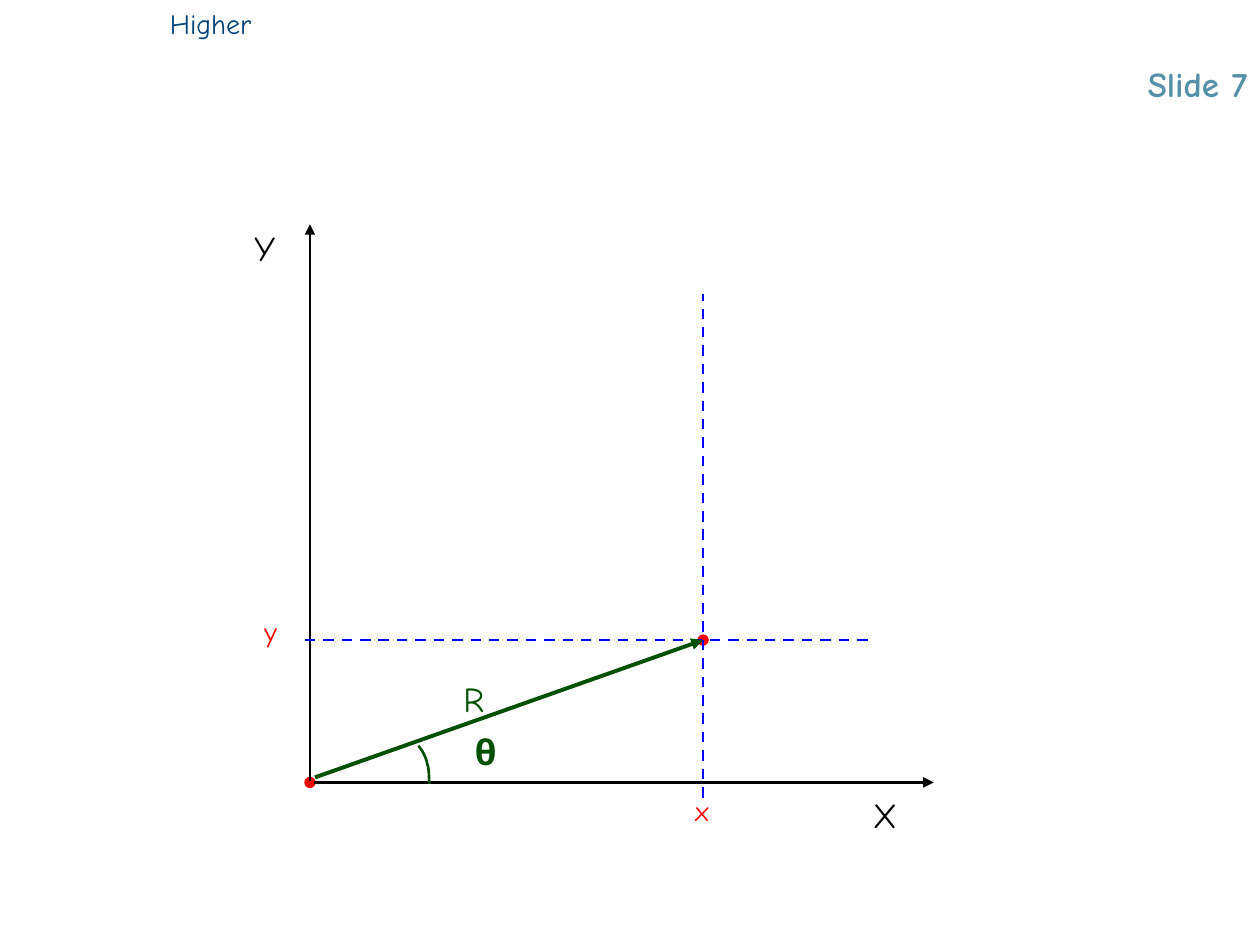
from dataclasses import dataclass

from lxml.etree import SubElement
from pptx import Presentation
from pptx.dml.color import RGBColor
from pptx.enum.dml import MSO_LINE
from pptx.enum.shapes import MSO_CONNECTOR, MSO_SHAPE
from pptx.enum.text import MSO_AUTO_SIZE, PP_ALIGN
from pptx.oxml.ns import qn
from pptx.util import Inches, Pt

FONT = "Comic Neue"
COLORS = {
    "navy": "054780",
    "teal": "5490A8",
    "head": "034176",
    "red": "FF0000",
    "black": "000000",
    "blue": "0000FF",
    "green": "005000",
}


@dataclass
class Label:
    text: str
    left: float
    top: float
    size: int
    color: str
    bold: bool = False
    width: float = 0.75


@dataclass
class Line:
    start: tuple[float, float]
    end: tuple[float, float]
    color: str
    width: float = 1.5
    arrow: bool = False


DOTS = [(2.46, 6.21), (5.58, 5.08)]
LINES = [
    Line((2.49, 6.21), (7.41, 6.21), "black", arrow=True),
    Line((2.46, 6.2), (2.46, 1.78), "black", arrow=True),
    Line((5.58, 6.33), (5.58, 2.33), "blue"),
    Line((2.42, 5.08), (6.92, 5.08), "blue"),
    Line((2.5, 6.17), (5.58, 5.08), "green", 2.25, True),
]
LABELS = [
    Label("Higher", 1.25, 0, 16, "head", width=3.58),
    Label("X", 6.83, 6.25, 20, "black"),
    Label("Y", 1.92, 1.75, 20, "black"),
    Label("x", 5.42, 6.25, 16, "red"),
    Label("y", 2, 4.83, 16, "red"),
    Label("R", 3.58, 5.33, 20, "green"),
    Label("θ", 3.67, 5.75, 20, "green", True),
]
CURVES = [
    ((3.32, 5.92), (3.34, 5.94), (3.38, 6), (3.39, 6.06)),
    ((3.39, 6.06), (3.41, 6.11), (3.4, 6.18), (3.41, 6.22)),
]


def paint(name: str) -> RGBColor:
    return RGBColor.from_string(COLORS[name])


def style(font, size: int, color: str, bold: bool) -> None:
    font.name = FONT
    font.size = Pt(size)
    font.bold = bold
    font.color.rgb = paint(color)


def add_box(slide, left: float, top: float, width: float, height: float):
    box = slide.shapes.add_textbox(
        Inches(left), Inches(top), Inches(width), Inches(height)
    )
    frame = box.text_frame
    frame.word_wrap = True
    frame.auto_size = MSO_AUTO_SIZE.SHAPE_TO_FIT_TEXT
    return frame.paragraphs[0]


def add_title(slide) -> None:
    para = add_box(slide, 1.67, 0.17, 8.33, 0.77)
    para.alignment = PP_ALIGN.RIGHT
    for text, size, color in (("\t", 40, "navy"), ("Slide 7", 20, "teal")):
        run = para.add_run()
        run.text = text
        style(run.font, size, color, True)


def add_label(slide, label: Label) -> None:
    height = 0.43 if label.size == 20 else 0.37
    para = add_box(slide, label.left, label.top, label.width, height)
    para.text = label.text
    style(para.font, label.size, label.color, label.bold)


def add_dot(slide, x: float, y: float, size: float = 0.08) -> None:
    dot = slide.shapes.add_shape(
        MSO_SHAPE.OVAL,
        Inches(x - size / 2), Inches(y - size / 2), Inches(size), Inches(size),
    )
    dot.shadow.inherit = False
    dot.fill.solid()
    dot.fill.fore_color.rgb = paint("red")
    dot.line.color.rgb = paint("red")
    dot.line.width = Pt(0.75)


def add_line(slide, line: Line) -> None:
    ends = [Inches(v) for v in (*line.start, *line.end)]
    shape = slide.shapes.add_connector(MSO_CONNECTOR.STRAIGHT, *ends)
    shape.line.color.rgb = paint(line.color)
    shape.line.width = Pt(line.width)
    if line.arrow:
        SubElement(shape.line._get_or_add_ln(), qn("a:tailEnd"), type="triangle")
    else:
        shape.line.dash_style = MSO_LINE.DASH
    SubElement(shape._element.spPr, qn("a:effectLst"))


def bend(curve: tuple, t: float) -> tuple[int, int]:
    parts = ((1 - t) ** 3, 3 * t * (1 - t) ** 2, 3 * t**2 * (1 - t), t**3)
    x, y = (sum(p * v for p, v in zip(parts, axis)) for axis in zip(*curve))
    return Inches(x), Inches(y)


def add_arc(slide, steps: int = 8) -> None:
    points = [
        bend(curve, i / steps) for curve in CURVES for i in range(1, steps + 1)
    ]
    pen = slide.shapes.build_freeform(*bend(CURVES[0], 0))
    pen.add_line_segments(points, close=False)
    arc = pen.convert_to_shape()
    arc.shadow.inherit = False
    arc.fill.background()
    arc.line.color.rgb = paint("green")
    arc.line.width = Pt(1.5)


def main() -> None:
    deck = Presentation()
    deck.slide_width, deck.slide_height = Inches(10), Inches(7.5)
    slide = deck.slides.add_slide(deck.slide_layouts[6])
    add_title(slide)
    for dot in DOTS:
        add_dot(slide, *dot)
    for line in LINES:
        add_line(slide, line)
    add_arc(slide)
    for label in LABELS:
        add_label(slide, label)
    deck.save("out.pptx")


if __name__ == "__main__":
    main()
